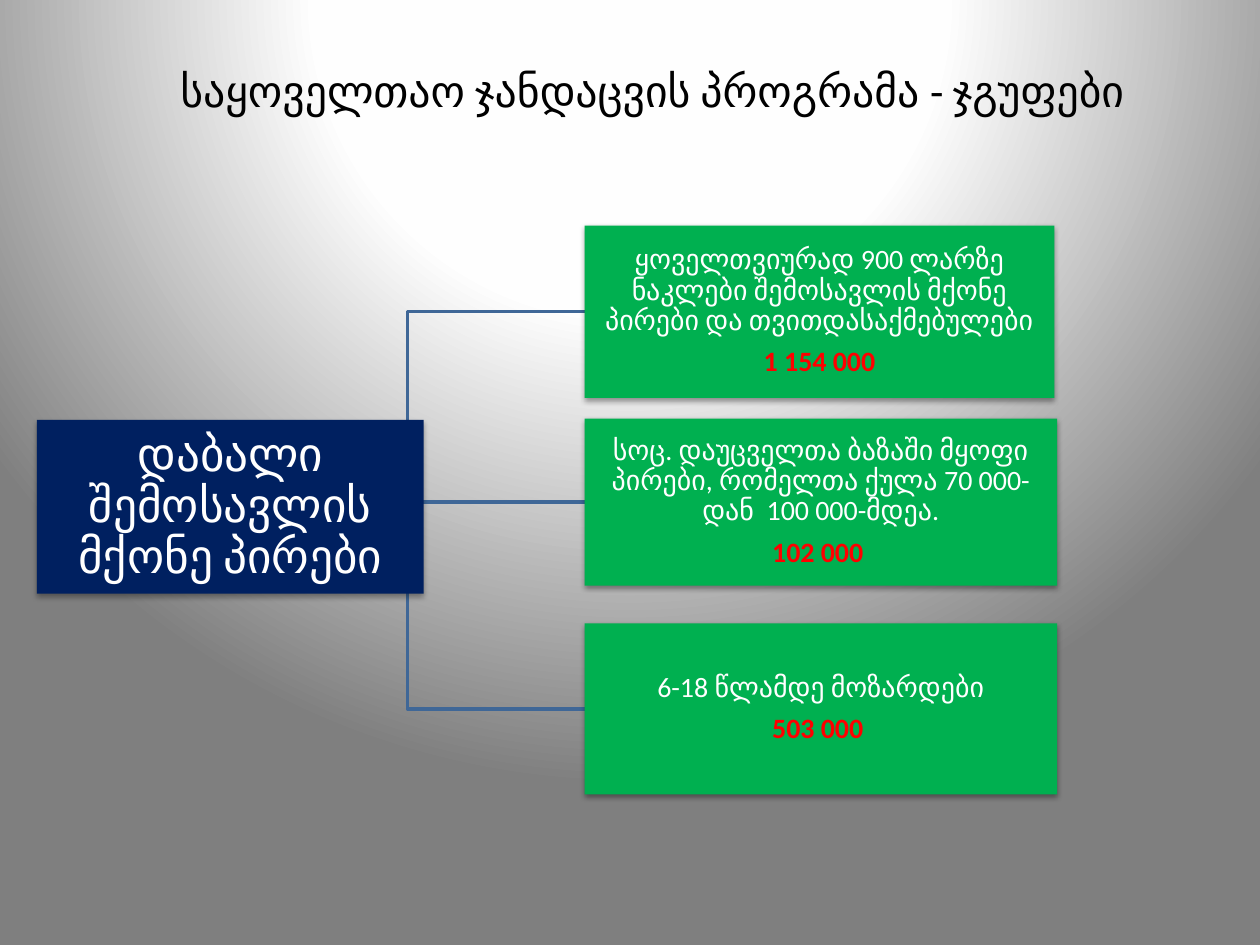
from pptx import Presentation
from pptx.dml.color import RGBColor
from pptx.enum.shapes import MSO_SHAPE
from pptx.enum.text import MSO_ANCHOR, PP_ALIGN
from pptx.oxml import parse_xml
from pptx.oxml.ns import nsdecls
from pptx.util import Pt

RECT = MSO_SHAPE.RECTANGLE
MIDDLE = MSO_ANCHOR.MIDDLE
CENTER = PP_ALIGN.CENTER

FONT = "Calibri"
BLACK = RGBColor(0x00, 0x00, 0x00)
WHITE = RGBColor(0xFF, 0xFF, 0xFF)
NAVY = RGBColor(0x00, 0x20, 0x60)
GREEN = RGBColor(0x00, 0xB0, 0x50)
RED = RGBColor(0xFF, 0x00, 0x00)
BLUE = RGBColor(0x3F, 0x67, 0x97)

BG_STOPS = [(0, "FFFFFF"), (40, "FEFEFE"), (100, "7F7F7F")]

TITLE = "საყოველთაო ჯანდაცვის პროგრამა - ჯგუფები"
TITLE_BOX = (49, 20.2, 648, 62.6)
ROOT = "დაბალი შემოსავლის მქონე პირები"
ROOT_BOX = (21.1, 240, 221, 99.2)
GROUP_LEFT = 334.1
GROUPS = [
    ("ყოველთვიურად 900 ლარზე ნაკლები შემოსავლის მქონე პირები და თვითდასაქმებულები",
     "1 154 000", 128.9, 268.4, 98.5),
    ("სოც. დაუცველთა ბაზაში მყოფი პირები, რომელთა ქულა 70 000-დან  100 000-მდეა.",
     "102 000 ", 239.2, 270, 95.5),
    ("6-18 წლამდე მოზარდები",
     "503 000 ", 356.2, 270, 97.8),
]


def set_background(slide):
    stops = "".join(
        f'<a:gs pos="{pos * 1000}"><a:srgbClr val="{color}"/></a:gs>'
        for pos, color in BG_STOPS)
    slide.element.cSld.insert(0, parse_xml(
        f'<p:bg {nsdecls("p", "a")}><p:bgPr><a:gradFill rotWithShape="1">'
        f'<a:gsLst>{stops}</a:gsLst><a:path path="circle">'
        '<a:fillToRect l="50000" t="-80000" r="50000" b="180000"/></a:path>'
        '</a:gradFill><a:effectLst/></p:bgPr></p:bg>'))


def write(tf, text, size, color, bold=False, first=True, spacing=1.0, after=0):
    p = tf.paragraphs[0] if first else tf.add_paragraph()
    p.alignment = CENTER
    p.line_spacing = spacing
    p.space_after = Pt(after)
    r = p.add_run()
    r.text = text
    r.font.name = FONT
    r.font.size = Pt(size)
    r.font.bold = bold
    r.font.color.rgb = color


def prepare_frame(sp, inset):
    tf = sp.text_frame
    tf.word_wrap = True
    tf.vertical_anchor = MIDDLE
    tf.margin_left = tf.margin_right = Pt(inset)
    tf.margin_top = tf.margin_bottom = Pt(inset)
    return tf


def add_box(slide, box, fill, inset, distance, opacity):
    sp = slide.shapes.add_shape(RECT, *map(Pt, box))
    sp.fill.solid()
    sp.fill.fore_color.rgb = fill
    sp.line.fill.background()
    sp.shadow.inherit = False
    sp.element.spPr.find("{*}effectLst").append(parse_xml(
        f'<a:outerShdw {nsdecls("a")} blurRad="{Pt(3.1)}" dist="{Pt(distance)}" '
        'dir="5400000" rotWithShape="0"><a:srgbClr val="000000">'
        f'<a:alpha val="{opacity * 1000}"/></a:srgbClr></a:outerShdw>'))
    return prepare_frame(sp, inset)


def add_branch(slide, start, end):
    (x1, y1), (x2, y2) = start, end
    mid = (x1 + x2) / 2
    builder = slide.shapes.build_freeform(Pt(x1), Pt(y1))
    builder.add_line_segments(
        [(Pt(x), Pt(y)) for x, y in ((mid, y1), (mid, y2), (x2, y2))], close=False)
    sp = builder.convert_to_shape()
    sp.fill.background()
    sp.line.color.rgb = BLUE
    sp.line.width = Pt(2)
    sp.shadow.inherit = False


def main():
    prs = Presentation()
    prs.slide_width, prs.slide_height = Pt(720), Pt(540)
    slide = prs.slides.add_slide(prs.slide_layouts[6])
    set_background(slide)

    title = slide.shapes.add_textbox(*map(Pt, TITLE_BOX))
    write(prepare_frame(title, 3.6), TITLE, 25, BLACK)

    left, top, width, height = ROOT_BOX
    root_center = (left + width / 2, top + height / 2)
    for _, _, y, _, h in reversed(GROUPS):
        add_branch(slide, root_center, (GROUP_LEFT, y + h / 2))

    tf = add_box(slide, ROOT_BOX, NAVY, 1.4, 1.8, 35)
    write(tf, ROOT, 27, WHITE, spacing=0.9)

    for label, count, y, w, h in GROUPS:
        tf = add_box(slide, (GROUP_LEFT, y, w, h), GREEN, 0.8, 1.6, 38)
        write(tf, label, 16, WHITE, spacing=0.9, after=6.5)
        write(tf, count, 16, RED, bold=True, first=False, spacing=0.9)

    prs.save("out.pptx")


if __name__ == "__main__":
    main()
